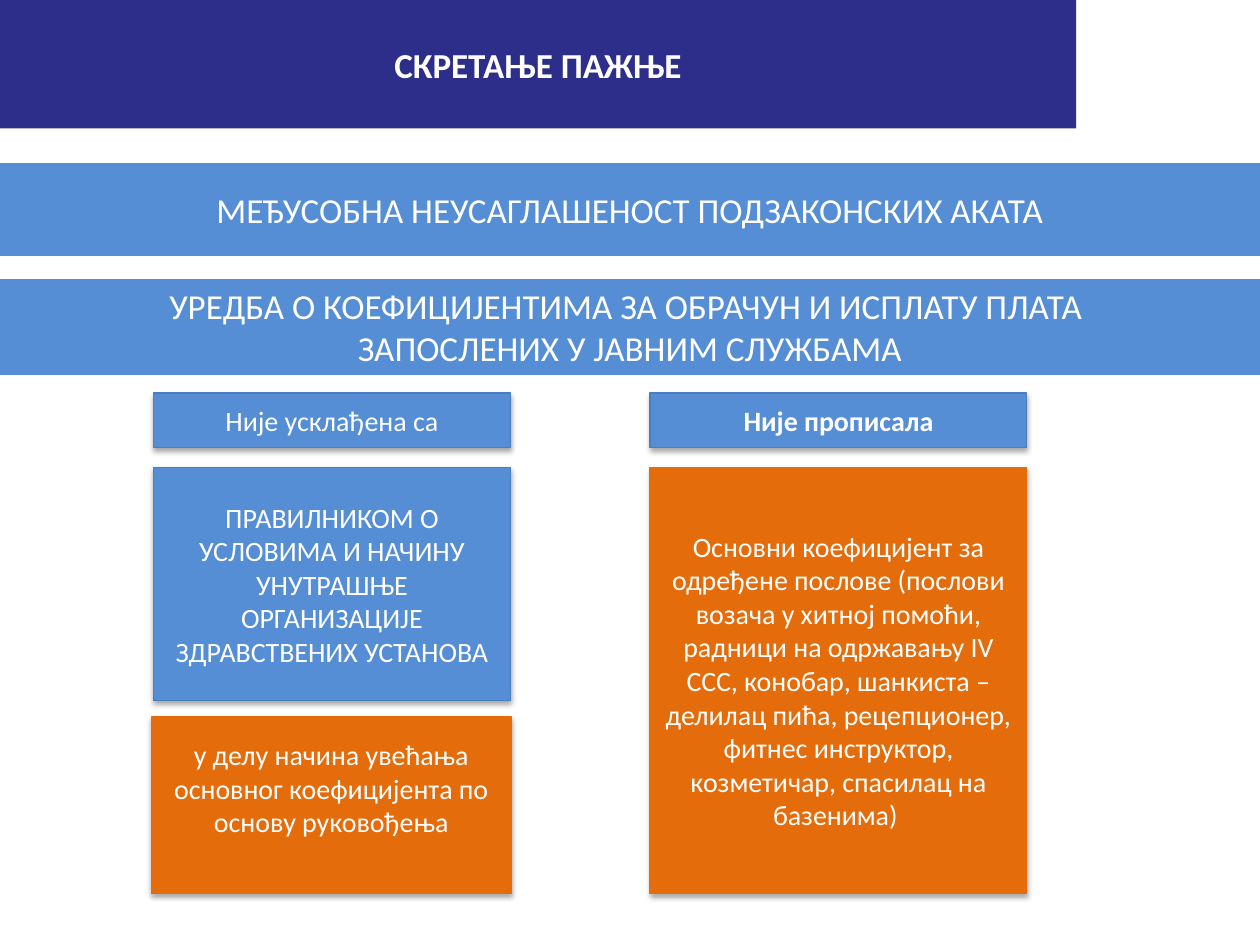
import dataclasses
import typing

import lxml.etree
import pptx
import pptx.dml.color
import pptx.enum.shapes
import pptx.enum.text
import pptx.oxml.ns
import pptx.util

Inches = pptx.util.Inches
Pt = pptx.util.Pt
Color = pptx.dml.color.RGBColor

NAVY = Color(0x2D, 0x2D, 0x8A)
BLUE = Color(0x55, 0x8E, 0xD5)
EDGE = Color(0x4B, 0x7E, 0xBC)
ORANGE = Color(0xE4, 0x6C, 0x0A)
WHITE = Color(0xFF, 0xFF, 0xFF)


@dataclasses.dataclass(frozen=True)
class Box:
    text: str
    left: float
    top: float
    width: float
    height: float
    fill: Color
    line: typing.Optional[Color] = None
    weight: float = 0.75
    size: int = 16
    bold: bool = False
    shadow: bool = True
    foot: float = 0.05


LEFT, RIGHT = 1.22, 5.16
SLIM, WIDE = 2.83, 2.99
HEAD, BODY = 3.12, 3.71

TITLE = Box("СКРЕТАЊЕ ПАЖЊЕ", 0, 0, 8.54, 1.02, NAVY,
            size=20, bold=True, shadow=False)

BANDS = [
    Box("МЕЂУСОБНА НЕУСАГЛАШЕНОСТ ПОДЗАКОНСКИХ АКАТА",
        0, 1.31, 10, 0.71, BLUE, BLUE, 2, 20, shadow=False),
    Box("УРЕДБА О КОЕФИЦИЈЕНТИМА ЗА ОБРАЧУН И ИСПЛАТУ ПЛАТА \n"
        "ЗАПОСЛЕНИХ У ЈАВНИМ СЛУЖБАМА",
        0, 2.23, 10, 0.73, BLUE, BLUE, 2, 20, shadow=False),
]

CARDS = [
    Box("Основни коефицијент за одређене послове (послови возача у хитној "
        "помоћи, радници на одржавању IV ССС, конобар, шанкиста – делилац "
        "пића, рецепционер, фитнес инструктор, козметичар, спасилац на "
        "базенима) ", RIGHT, BODY, WIDE, 3.38, ORANGE, ORANGE),
    Box("у делу начина увећања основног коефицијента по основу руковођења",
        1.2, 5.69, 2.86, 1.4, ORANGE, ORANGE, foot=0.32),
    Box("Није прописала", RIGHT, HEAD, WIDE, 0.43, BLUE, EDGE, bold=True),
    Box("ПРАВИЛНИКОМ О УСЛОВИМА И НАЧИНУ УНУТРАШЊЕ ОРГАНИЗАЦИЈЕ "
        "ЗДРАВСТВЕНИХ УСТАНОВА", LEFT, BODY, SLIM, 1.85, BLUE, EDGE),
    Box("Није усклађена са", LEFT, HEAD, SLIM, 0.43, BLUE, EDGE),
]


def cast(shape: typing.Any) -> None:
    qn = pptx.oxml.ns.qn
    effects = shape._element.spPr.find(qn("a:effectLst"))
    outer = lxml.etree.SubElement(
        effects, qn("a:outerShdw"), blurRad=str(Pt(3.1)), dist=str(Pt(1.8)),
        dir="5400000", rotWithShape="0")
    black = lxml.etree.SubElement(outer, qn("a:srgbClr"), val="000000")
    lxml.etree.SubElement(black, qn("a:alpha"), val="35000")


def style(shape: typing.Any, box: Box) -> None:
    shape.left, shape.top = Inches(box.left), Inches(box.top)
    shape.width, shape.height = Inches(box.width), Inches(box.height)
    shape.fill.solid()
    shape.fill.fore_color.rgb = box.fill
    if box.line is None:
        shape.line.fill.background()
    else:
        shape.line.color.rgb = box.line
        shape.line.width = Pt(box.weight)
    shape.shadow.inherit = False
    if box.shadow:
        cast(shape)
    frame = shape.text_frame
    frame.text = box.text
    frame.word_wrap = True
    frame.auto_size = pptx.enum.text.MSO_AUTO_SIZE.NONE
    frame.vertical_anchor = pptx.enum.text.MSO_ANCHOR.MIDDLE
    frame.margin_bottom = Inches(box.foot)
    for para in frame.paragraphs:
        para.alignment = pptx.enum.text.PP_ALIGN.CENTER
        for run in para.runs:
            run.font.name = "Calibri"
            run.font.size = Pt(box.size)
            run.font.bold = box.bold
            run.font.color.rgb = WHITE


def draw(slide: typing.Any, box: Box) -> None:
    shape = slide.shapes.add_shape(
        pptx.enum.shapes.MSO_SHAPE.RECTANGLE, Inches(box.left),
        Inches(box.top), Inches(box.width), Inches(box.height))
    style(shape, box)


def main() -> None:
    deck = pptx.Presentation()
    deck.slide_width, deck.slide_height = Inches(10), Inches(7.5)
    slide = deck.slides.add_slide(deck.slide_layouts[5])
    style(slide.shapes.title, TITLE)
    for box in BANDS + CARDS:
        draw(slide, box)
    deck.save("out.pptx")


if __name__ == "__main__":
    main()
